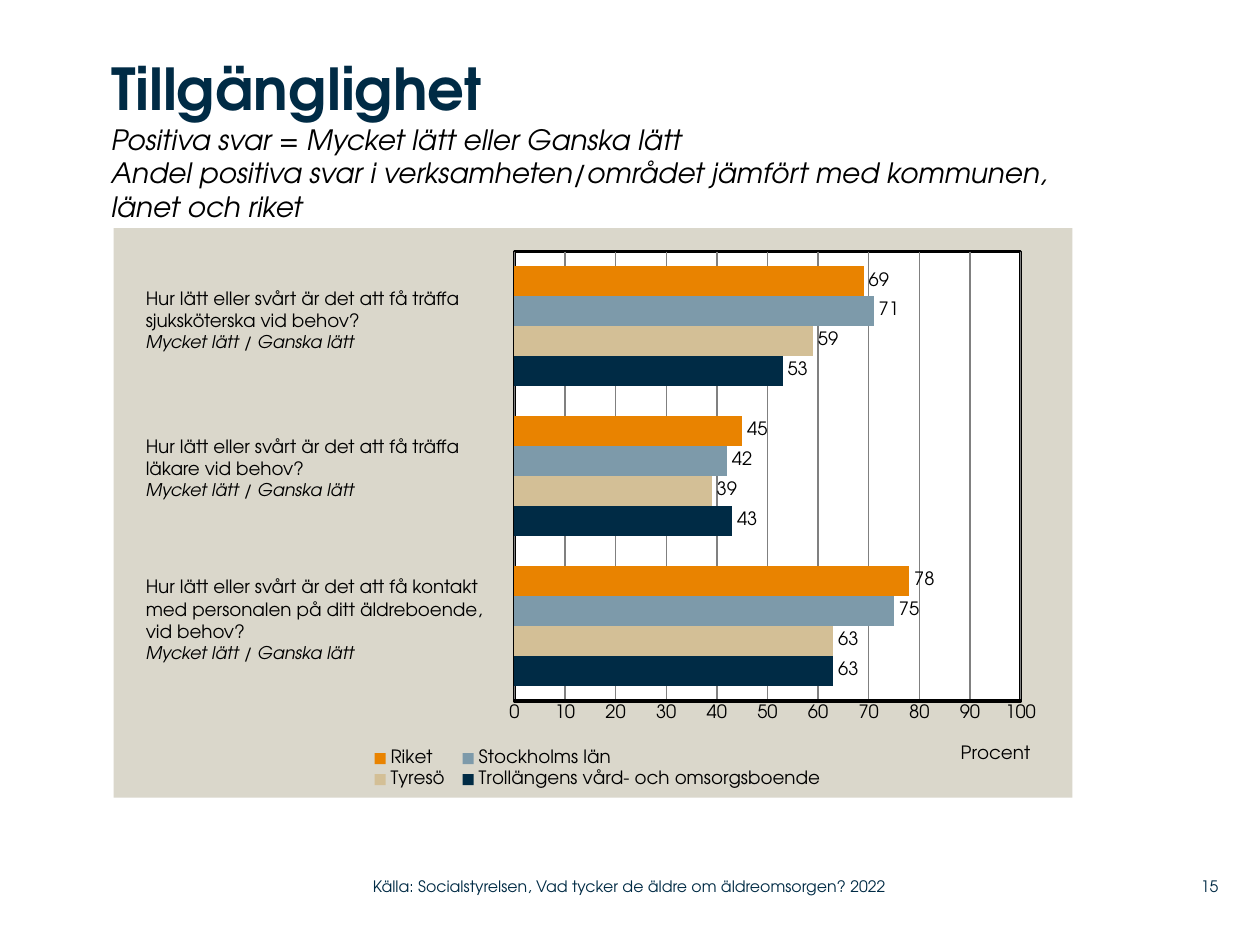
from lxml import etree
from pptx import Presentation
from pptx.chart.data import CategoryChartData
from pptx.dml.color import RGBColor
from pptx.enum.chart import XL_CHART_TYPE, XL_LABEL_POSITION, XL_LEGEND_POSITION, XL_TICK_MARK
from pptx.enum.text import MSO_ANCHOR, PP_ALIGN
from pptx.oxml import parse_xml
from pptx.oxml.ns import nsdecls, qn
from pptx.util import Cm, Pt

BAR = XL_CHART_TYPE.BAR_CLUSTERED
OUTSIDE = XL_LABEL_POSITION.OUTSIDE_END
BOTTOM = XL_LEGEND_POSITION.BOTTOM
NO_TICK = XL_TICK_MARK.NONE
TOP, MIDDLE = MSO_ANCHOR.TOP, MSO_ANCHOR.MIDDLE
LEFT, RIGHT = PP_ALIGN.LEFT, PP_ALIGN.RIGHT

FONT = "TeX Gyre Adventor"
NAVY, BLACK, WHITE, BEIGE, GREY = "002B45", "000000", "FFFFFF", "DAD7CB", "808080"

TITLE = "Tillgänglighet"
SUBTITLE = [
    "Positiva svar = Mycket lätt eller Ganska lätt",
    "Andel positiva svar i verksamheten/området jämfört med kommunen, länet och riket",
]
CATEGORIES = ["1", "2", "3"]
SERIES = [
    ("Trollängens vård- och omsorgsboende", (63, 43, 53), NAVY),
    ("Tyresö", (63, 39, 59), "D3BF96"),
    ("Stockholms län", (75, 42, 71), "7D9AAA"),
    ("Riket", (78, 45, 69), "E98300"),
]
ANSWER = "Mycket lätt / Ganska lätt"
QUESTIONS = [
    (5.66, 2.06, ["Hur lätt eller svårt är det att få träffa sjuksköterska vid behov?"]),
    (8.64, 2.06, ["Hur lätt eller svårt är det att få träffa", "läkare vid behov?"]),
    (11.48, 2.49, ["Hur lätt eller svårt är det att få kontakt",
                   "med personalen på ditt äldreboende,", "vid behov?"]),
]
FOOTERS = [
    (7.52, 11.25, LEFT, "Källa: Socialstyrelsen, Vad tycker de äldre om äldreomsorgen? 2022"),
    (23.37, 1.19, RIGHT, "15"),
]


def color(value):
    return RGBColor.from_string(value)


def style(font, size, value, bold=False, italic=False):
    font.name, font.size = FONT, Pt(size)
    font.bold, font.italic = bold, italic
    font.color.rgb = color(value)


def remove_insets(frame):
    frame.margin_left = frame.margin_top = frame.margin_right = frame.margin_bottom = 0


def add_text(slide, bounds, lines, align=LEFT):
    frame = slide.shapes.add_textbox(*map(Cm, bounds)).text_frame
    frame.word_wrap = True
    for index, (text, size, value, italic) in enumerate(lines):
        para = frame.paragraphs[0] if index == 0 else frame.add_paragraph()
        para.text, para.alignment = text, align
        style(para.font, size, value, italic=italic)
    return frame


def set_layout(parent, index, inner=False, **parts):
    old = parent.find(qn("c:layout"))
    if old is not None:
        parent.remove(old)
    layout = parse_xml(f"<c:layout {nsdecls('c')}><c:manualLayout/></c:layout>")
    values = {"layoutTarget": "inner"} if inner else {}
    values.update({"xMode": "edge", "yMode": "edge"}, **parts)
    for name, value in values.items():
        etree.SubElement(layout[0], qn(f"c:{name}")).set("val", str(value))
    parent.insert(index, layout)


def area_format(fill, line=""):
    return parse_xml(
        f"<c:spPr {nsdecls('c', 'a')}><a:solidFill><a:srgbClr val='{fill}'/></a:solidFill>"
        f"<a:ln w='{Pt(2)}'>{line or '<a:noFill/>'}</a:ln></c:spPr>")


def add_title(slide):
    title = slide.shapes.title
    title.left, title.top, title.width, title.height = map(Cm, (2.24, 1.07, 19.74, 3.53))
    frame = title.text_frame
    frame.word_wrap, frame.vertical_anchor = True, TOP
    remove_insets(frame)
    para = frame.paragraphs[0]
    para.alignment = LEFT
    span = para.add_run()
    span.text = TITLE
    style(span.font, 33, NAVY, bold=True)
    for line in SUBTITLE:
        para.add_line_break()
        span = para.add_run()
        span.text = line
        style(span.font, 16, BLACK, italic=True)


def add_answers_chart(slide):
    data = CategoryChartData()
    data.categories = CATEGORIES
    for name, values, _ in SERIES:
        data.add_series(name, values)
    bounds = map(Cm, (2.29, 4.6, 19.33, 11.48))
    chart = slide.shapes.add_chart(BAR, *bounds, data).chart
    style(chart.font, 10.5, BLACK)
    chart.has_title = False

    plot = chart.plots[0]
    plot.gap_width, plot.overlap, plot.vary_by_categories = 100, 0, False
    for series, (_, _, value) in zip(plot.series, SERIES):
        series.format.fill.solid()
        series.format.fill.fore_color.rgb = color(value)
        labels = series.data_labels
        labels.show_value, labels.position = True, OUTSIDE
        style(labels.font, 10.5, BLACK)

    chart.category_axis.visible = False
    axis = chart.value_axis
    axis.minimum_scale, axis.maximum_scale, axis.major_unit = 0, 100, 10
    axis.major_tick_mark = axis.minor_tick_mark = NO_TICK
    axis.format.line.color.rgb = color(BLACK)
    axis.format.line.width = Pt(2)
    axis.major_gridlines.format.line.color.rgb = color(GREY)
    axis.major_gridlines.format.line.width = Pt(0.75)
    para = axis.axis_title.text_frame.paragraphs[0]
    para.text = "Procent"
    style(para.font, 10.5, BLACK)

    chart.has_legend = True
    legend = chart.legend
    legend.position, legend.include_in_layout = BOTTOM, False
    style(legend.font, 10.5, BLACK)

    root = chart.element if hasattr(chart, "element") else chart._chartSpace
    area = root.find(f".//{qn('c:plotArea')}")
    set_layout(area, 0, inner=True, x=0.418, y=0.041, w=0.528, h=0.789)
    set_layout(area.find(f".//{qn('c:title')}"), 1, x=0.88, y=0.9)
    set_layout(root.find(f".//{qn('c:legend')}"), 1, x=0.26, y=0.91, w=0.49, h=0.08)
    border = f"<a:solidFill><a:srgbClr val='{BLACK}'/></a:solidFill>"
    area.append(area_format(WHITE, border))
    root.find(qn("c:chart")).addnext(area_format(BEIGE))


def main():
    deck = Presentation()
    deck.slide_width, deck.slide_height = Cm(25.4), Cm(19.05)
    slide = deck.slides.add_slide(deck.slide_layouts[5])
    add_title(slide)
    add_answers_chart(slide)
    for top, height, question in QUESTIONS:
        lines = [(line, 10.5, BLACK, False) for line in question]
        add_text(slide, (2.69, top, 7.62, height), lines + [(ANSWER, 10, BLACK, True)])
    for left, width, align, text in FOOTERS:
        frame = add_text(slide, (left, 17.5, width, 0.74), [(text, 9, NAVY, False)], align)
        frame.vertical_anchor = MIDDLE
        remove_insets(frame)
    deck.save("out.pptx")


if __name__ == "__main__":
    main()
